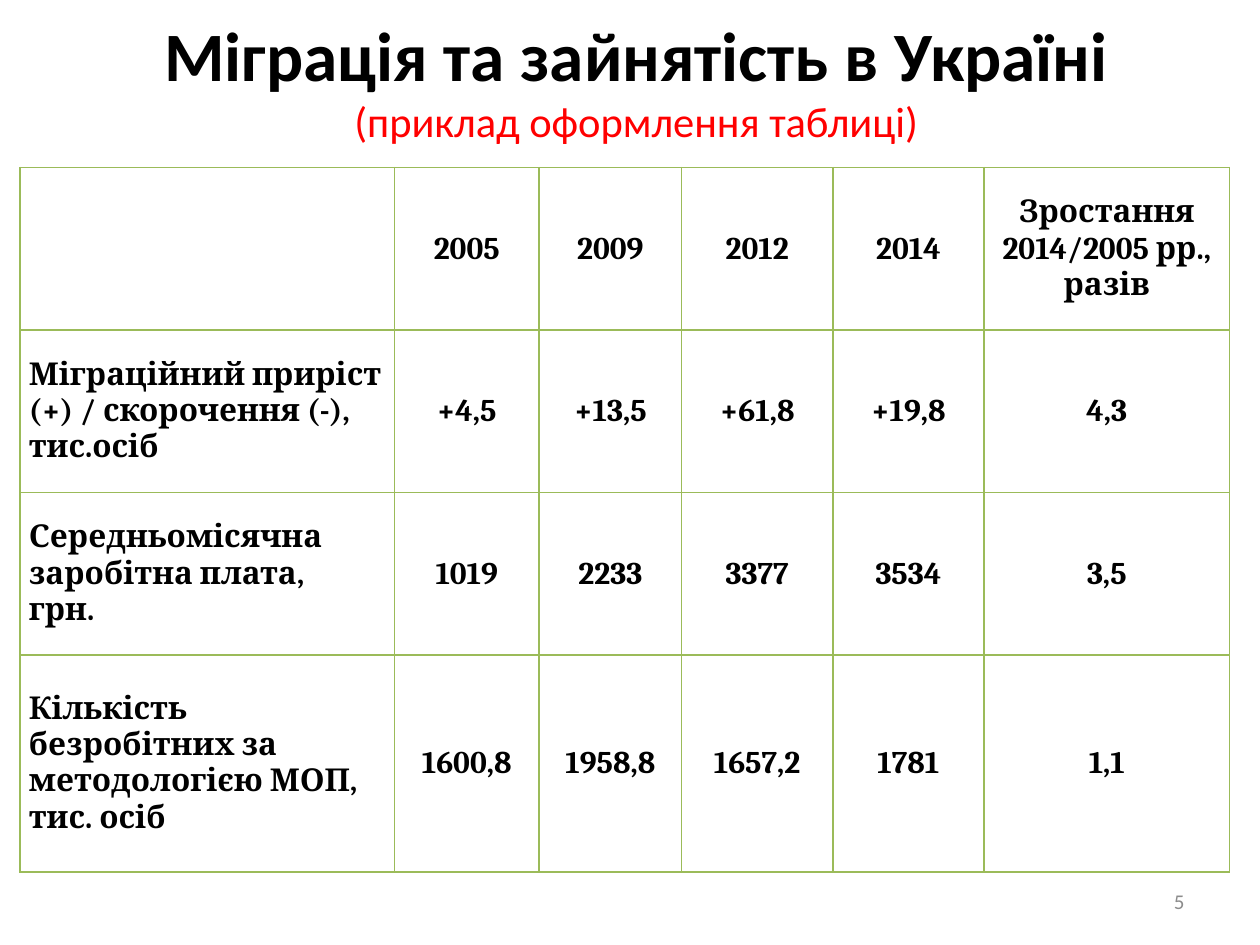
from lxml import etree
from pptx import Presentation
from pptx.dml.color import RGBColor
from pptx.enum.text import MSO_ANCHOR, PP_ALIGN
from pptx.oxml.ns import qn
from pptx.util import Inches, Pt

MIDDLE = MSO_ANCHOR.MIDDLE
LEFT, CENTER, RIGHT = PP_ALIGN.LEFT, PP_ALIGN.CENTER, PP_ALIGN.RIGHT
COLORS = {"text": "000000", "subtitle": "FF0000", "number": "8C8C8C", "border": "9BBB59"}
COLUMN_WIDTHS = [2.97, 1.15, 1.13, 1.2, 1.2, 1.95]
ROW_HEIGHTS = [1.29, 1.29, 1.29, 1.72]
ROWS = [
    ["", "2005", "2009", "2012", "2014", "Зростання\n2014/2005 рр.,\nразів"],
    ["Міграційний приріст (+) / скорочення (-),\nтис.осіб", "+4,5", "+13,5", "+61,8", "+19,8", "4,3"],
    ["Середньомісячна заробітна плата,\nгрн.", "1019", "2233", "3377", "3534", "3,5"],
    ["Кількість безробітних за методологією МОП, тис. осіб", "1600,8", "1958,8", "1657,2", "1781", "1,1"],
]


def format_run(run, font_name, size, color, bold=False):
    """Set the font of one run."""
    run.font.name = font_name
    run.font.size = Pt(size)
    run.font.bold = bold
    run.font.color.rgb = RGBColor.from_string(COLORS[color])


def add_text(slide, box, text, alignment):
    """Add a one-paragraph text box and return its runs."""
    text_frame = slide.shapes.add_textbox(*map(Inches, box)).text_frame
    text_frame.word_wrap = True
    text_frame.vertical_anchor = MIDDLE
    paragraph = text_frame.paragraphs[0]
    paragraph.text = text
    paragraph.alignment = alignment
    return paragraph.runs


def add_title(slide, box):
    """Place the heading and the red line below it."""
    heading, subtitle = add_text(
        slide, box, "Міграція та зайнятість в Україні\v(приклад оформлення таблиці)", CENTER)
    format_run(heading, "Calibri", 39.6, "text", bold=True)
    format_run(subtitle, "Calibri", 24.3, "subtitle")


def add_slide_number(slide, box):
    """Place the slide number."""
    for run in add_text(slide, box, "5", RIGHT):
        format_run(run, "Calibri", 12, "number")


def set_borders(cell):
    """Draw a thin line on all four sides of a cell."""
    properties = cell._tc.get_or_add_tcPr()
    for position, side in enumerate(("lnL", "lnR", "lnT", "lnB")):
        line = etree.Element(qn(f"a:{side}"), w=str(Pt(1)))
        fill = etree.SubElement(line, qn("a:solidFill"))
        etree.SubElement(fill, qn("a:srgbClr"), val=COLORS["border"])
        properties.insert(position, line)


def fill_cell(cell, text, alignment):
    """Write and format one table cell."""
    cell.fill.background()
    set_borders(cell)
    cell.vertical_anchor = MIDDLE
    cell.margin_left = cell.margin_right = Inches(0.07)
    cell.margin_top = cell.margin_bottom = 0
    cell.text_frame.text = text
    for paragraph in cell.text_frame.paragraphs:
        paragraph.alignment = alignment
        for run in paragraph.runs:
            format_run(run, "Cambria", 18, "text", bold=True)


def add_migration_table(slide, box):
    """Place the table of migration and employment figures."""
    table = slide.shapes.add_table(len(ROWS), len(COLUMN_WIDTHS), *map(Inches, box)).table
    table.first_row = table.horz_banding = False
    for column, width in zip(table.columns, COLUMN_WIDTHS):
        column.width = Inches(width)
    for row, height, texts in zip(table.rows, ROW_HEIGHTS, ROWS):
        row.height = Inches(height)
        for index, (cell, text) in enumerate(zip(row.cells, texts)):
            fill_cell(cell, text, CENTER if index else LEFT)


def main():
    """Build and save the slide."""
    presentation = Presentation()
    presentation.slide_width, presentation.slide_height = Inches(10), Inches(7.5)
    slide = presentation.slides.add_slide(presentation.slide_layouts[6])
    add_title(slide, (0.55, 0, 9, 1.25))
    add_slide_number(slide, (7.17, 6.95, 2.33, 0.4))
    add_migration_table(slide, (0.16, 1.33, sum(COLUMN_WIDTHS), sum(ROW_HEIGHTS)))
    presentation.save("out.pptx")


if __name__ == "__main__":
    main()
